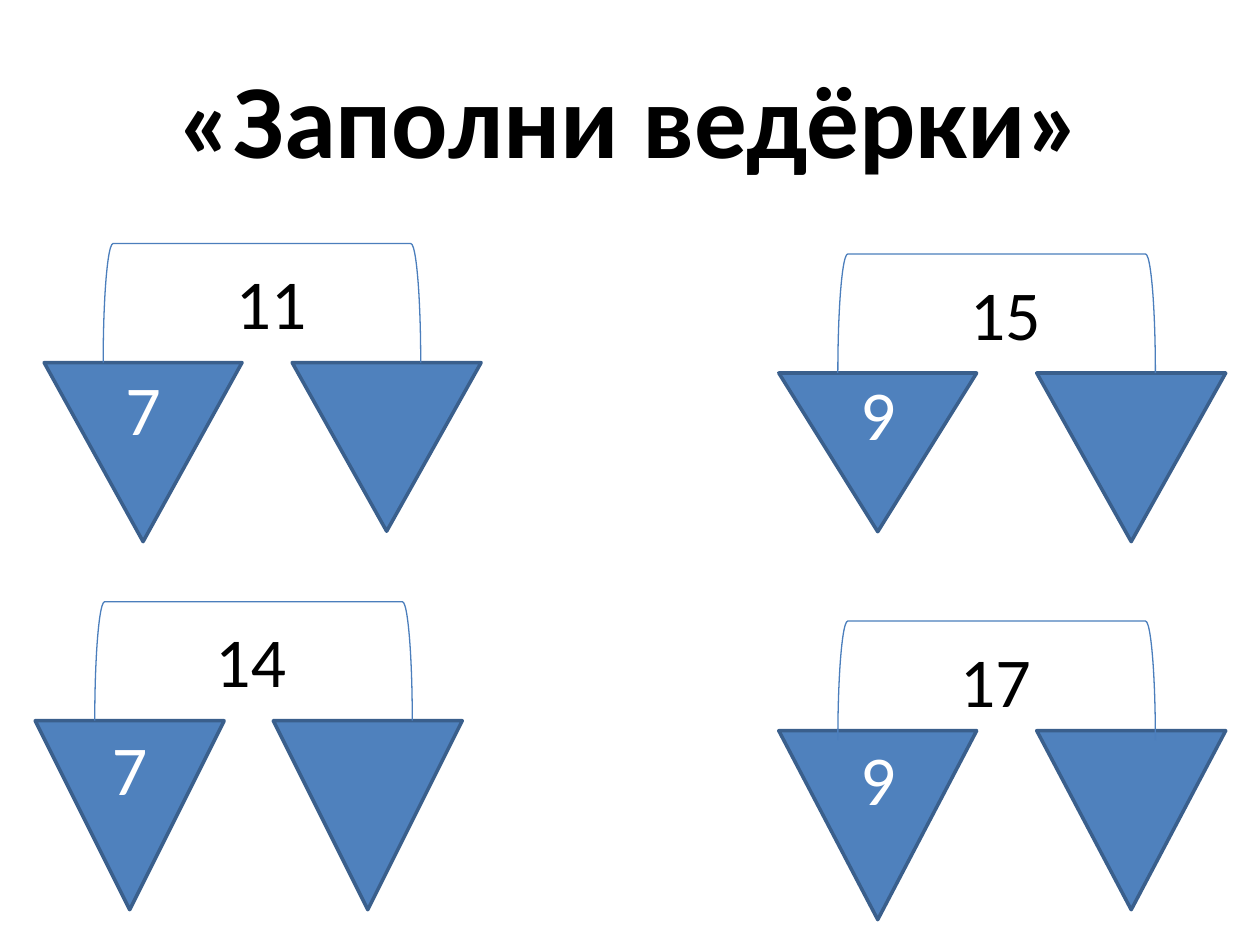
from pptx import Presentation
from pptx.dml.color import RGBColor
from pptx.enum.shapes import MSO_SHAPE
from pptx.enum.text import MSO_ANCHOR, MSO_AUTO_SIZE, PP_ALIGN
from pptx.util import Cm, Pt

COLORS = {"pail": "4F81BD", "edge": "3A5F8C", "handle": "4B7EBC",
          "ink": "000000", "light": "FFFFFF"}

# Handle size as seen, and the size of the empty right pail
SPAN, RISE, SIDE = 6.4, 2.4, 3.81

# Sum, known part, pail top, handle centre, handle foot,
# label left and width, left pail (x, width, height), right pail (x, height)
GROUPS = [
    ("11", "7", 7.31, 5.28, 7.31, 4.5, 2.2, (0.89, 3.99, 3.61), (5.89, 3.4)),
    ("15", "9", 7.52, 20.09, 7.52, 19.3, 2.4, (15.7, 3.99, 3.2), (20.9, 3.4)),
    ("14", "7", 14.53, 5.11, 14.53, 4.09, 2.4, (0.71, SIDE, SIDE), (5.51, SIDE)),
    ("17", "9", 14.73, 20.09, 14.92, 19.1, 2.4, (15.7, 3.99, SIDE), (20.9, 3.61)),
]


class Painter:
    font = "Calibri"

    def __init__(self, slide):
        self.slide = slide

    def color(self, name):
        return RGBColor.from_string(COLORS[name])

    def words(self, frame, text, size, ink, align, bold=False):
        par = frame.paragraphs[0]
        par.alignment = align
        run = par.add_run()
        run.text = text
        style = {"name": self.font, "size": Pt(size), "bold": bold}
        for key, value in style.items():
            setattr(run.font, key, value)
        run.font.color.rgb = self.color(ink)

    def shape(self, kind, box, edge, width):
        item = self.slide.shapes.add_shape(kind, *map(Cm, box))
        item.shadow.inherit = False
        item.line.color.rgb = self.color(edge)
        item.line.width = Pt(width)
        return item

    def pail(self, box, text=""):
        item = self.shape(MSO_SHAPE.FLOWCHART_MERGE, box, "edge", 2)
        item.fill.solid()
        item.fill.fore_color.rgb = self.color("pail")
        if text:
            item.text_frame.vertical_anchor = MSO_ANCHOR.MIDDLE
            self.words(item.text_frame, text, 40, "light", PP_ALIGN.CENTER)

    def handle(self, mid, foot):
        # A left bracket turned upright keeps its centre
        box = (mid - RISE / 2, foot - RISE / 2 - SPAN / 2, RISE, SPAN)
        item = self.shape(MSO_SHAPE.LEFT_BRACKET, box, "handle", 0.75)
        item.fill.background()
        item.rotation = 90

    def label(self, box, text, size, align=PP_ALIGN.LEFT, bold=False, **form):
        frame = self.slide.shapes.add_textbox(*map(Cm, box)).text_frame
        for key, value in {"word_wrap": True, **form}.items():
            setattr(frame, key, value)
        self.words(frame, text, size, "ink", align, bold)


def main():
    deck = Presentation()
    deck.slide_width, deck.slide_height = Cm(25.4), Cm(19.05)
    paint = Painter(deck.slides.add_slide(deck.slide_layouts[6]))

    # Title
    paint.label((1.27, 0.76, 22.86, 3.18), "«Заполни ведёрки»", 60,
                PP_ALIGN.CENTER, True, vertical_anchor=MSO_ANCHOR.MIDDLE)

    # Each group: two pails, the handle over them and the sum
    for total, part, top, mid, foot, left, wide, full, bare in GROUPS:
        x, width, height = full
        paint.pail((x, top, width, height), part)
        x, height = bare
        paint.pail((x, top, SIDE, height))
        paint.handle(mid, foot)
        paint.label((left, foot - RISE + 0.2, wide, 1.96), total, 40,
                    auto_size=MSO_AUTO_SIZE.SHAPE_TO_FIT_TEXT)

    deck.save("out.pptx")


if __name__ == "__main__":
    main()
